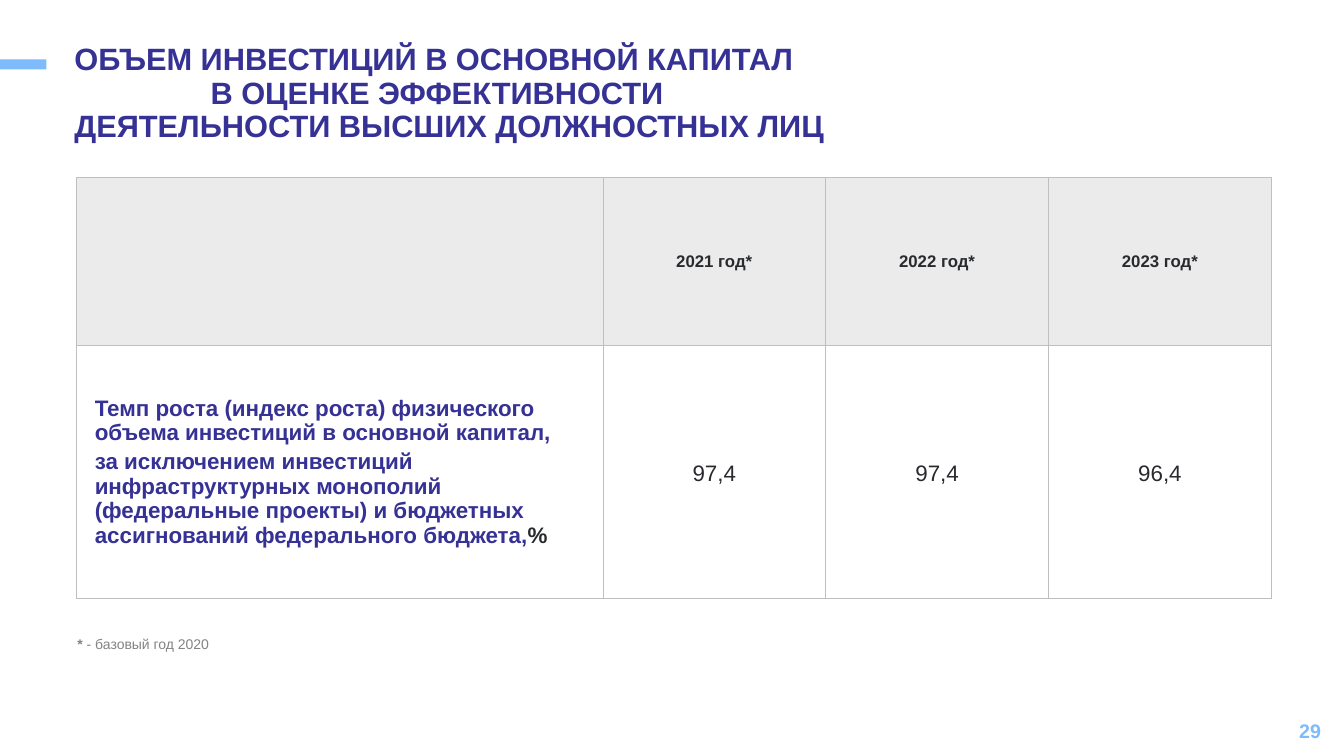
"""Build the slide on fixed capital investment in the assessment of senior officials."""
from lxml import etree
from pptx import Presentation
from pptx.dml.color import RGBColor
from pptx.enum import shapes, text
from pptx.oxml import ns
from pptx.util import Inches, Pt

COLORS = {"accent": "7DBBFC", "heading": "363194", "body": "282A2E",
          "note": "838383", "header": "EBEBEB", "white": "FFFFFF", "border": "BFBFBF"}
ALIGN = text.PP_ALIGN


def write(frame, paragraphs, size, color, bold=True, align=ALIGN.LEFT,
          line=None, before=0, after=0, indents=None):
    """Fill a text frame; each paragraph is a list of (text, overrides) runs."""
    frame.word_wrap = True
    for index, runs in enumerate(paragraphs):
        paragraph = frame.add_paragraph() if index else frame.paragraphs[0]
        paragraph.alignment = align
        paragraph.space_before = Pt(before if index else 0)
        paragraph.space_after = Pt(after)
        if line:
            paragraph.line_spacing = line
        if indents:
            properties = paragraph._p.get_or_add_pPr()
            properties.set("marL", str(Inches(indents[index])))
            properties.set("indent", "0")
        for words, changes in runs:
            run = paragraph.add_run()
            run.text = words
            run.font.name = "Arial"
            run.font.size = Pt(size)
            run.font.bold = changes.get("bold", bold)
            run.font.color.rgb = RGBColor.from_string(COLORS[changes.get("color", color)])


deck = Presentation()
deck.slide_width, deck.slide_height = Inches(13.33), Inches(7.5)
slide = deck.slides.add_slide(deck.slide_layouts[6])

accent = slide.shapes.add_shape(shapes.MSO_SHAPE.RECTANGLE, 0, Inches(0.59), Inches(0.46), Inches(0.1))
accent.shadow.inherit = False
accent.fill.solid()
accent.fill.fore_color.rgb = RGBColor.from_string(COLORS["accent"])
accent.line.fill.background()

page_number = slide.shapes.add_textbox(Inches(10.2), Inches(7.05), Inches(3), Inches(0.4)).text_frame
page_number.vertical_anchor = text.MSO_ANCHOR.MIDDLE
write(page_number, [[("29", {})]], 14, "accent", align=ALIGN.RIGHT)

YEARS = ["2021 год*", "2022 год*", "2023 год*"]
RATES = ["97,4", "97,4", "96,4"]
INDICATOR = [
    [("Темп роста (индекс роста) физического объема инвестиций в основной капитал,", {})],
    [("за исключением инвестиций инфраструктурных монополий (федеральные проекты) "
      "и бюджетных ассигнований федерального бюджета,", {}), ("%", {"color": "body"})],
]

growth = slide.shapes.add_table(2, 4, Inches(0.76), Inches(1.76), Inches(11.85), Inches(4.18)).table
for column, width in zip(growth.columns, [5.22, 2.21, 2.21, 2.21]):
    column.width = Inches(width)
for row, height in zip(growth.rows, [1.67, 2.51]):
    row.height = Inches(height)

for position, cell in enumerate(growth.iter_cells()):
    cell.vertical_anchor = text.MSO_ANCHOR.MIDDLE
    cell.margin_left = cell.margin_right = Inches(0.08)
    properties = cell._tc.get_or_add_tcPr()
    for side in ("lnL", "lnR", "lnT", "lnB"):
        border = etree.SubElement(properties, ns.qn(f"a:{side}"), w=str(Pt(0.5)))
        fill = etree.SubElement(border, ns.qn("a:solidFill"))
        etree.SubElement(fill, ns.qn("a:srgbClr"), val=COLORS["border"])
    cell.fill.solid()
    cell.fill.fore_color.rgb = RGBColor.from_string(COLORS["header" if position < 4 else "white"])

for column, (year, rate) in enumerate(zip(YEARS, RATES), start=1):
    write(growth.cell(0, column).text_frame, [[(year, {})]], 12, "body", align=ALIGN.CENTER)
    write(growth.cell(1, column).text_frame, [[(rate, {})]], 16, "body", bold=False,
          align=ALIGN.CENTER, line=1.15, after=1)
write(growth.cell(1, 0).text_frame, INDICATOR, 16, "heading", before=2.4, indents=[0.1, 0.1])

footnote = slide.shapes.add_textbox(Inches(0.67), Inches(6.24), Inches(6.43), Inches(0.27)).text_frame
write(footnote, [[("* ", {}), ("- базовый год 2020", {"bold": False})]], 10, "note", line=Pt(13))

title = slide.shapes.add_textbox(Inches(0.64), Inches(0.39), Inches(7.65), Inches(0.77)).text_frame
TITLE_LINES = ["ОБЪЕМ ИНВЕСТИЦИЙ В ОСНОВНОЙ КАПИТАЛ", "В ОЦЕНКЕ ЭФФЕКТИВНОСТИ",
               "ДЕЯТЕЛЬНОСТИ ВЫСШИХ ДОЛЖНОСТНЫХ ЛИЦ"]
write(title, [[(words, {})] for words in TITLE_LINES], 22, "heading", line=0.9, indents=[0, 1.35, 0])

deck.save("out.pptx")
